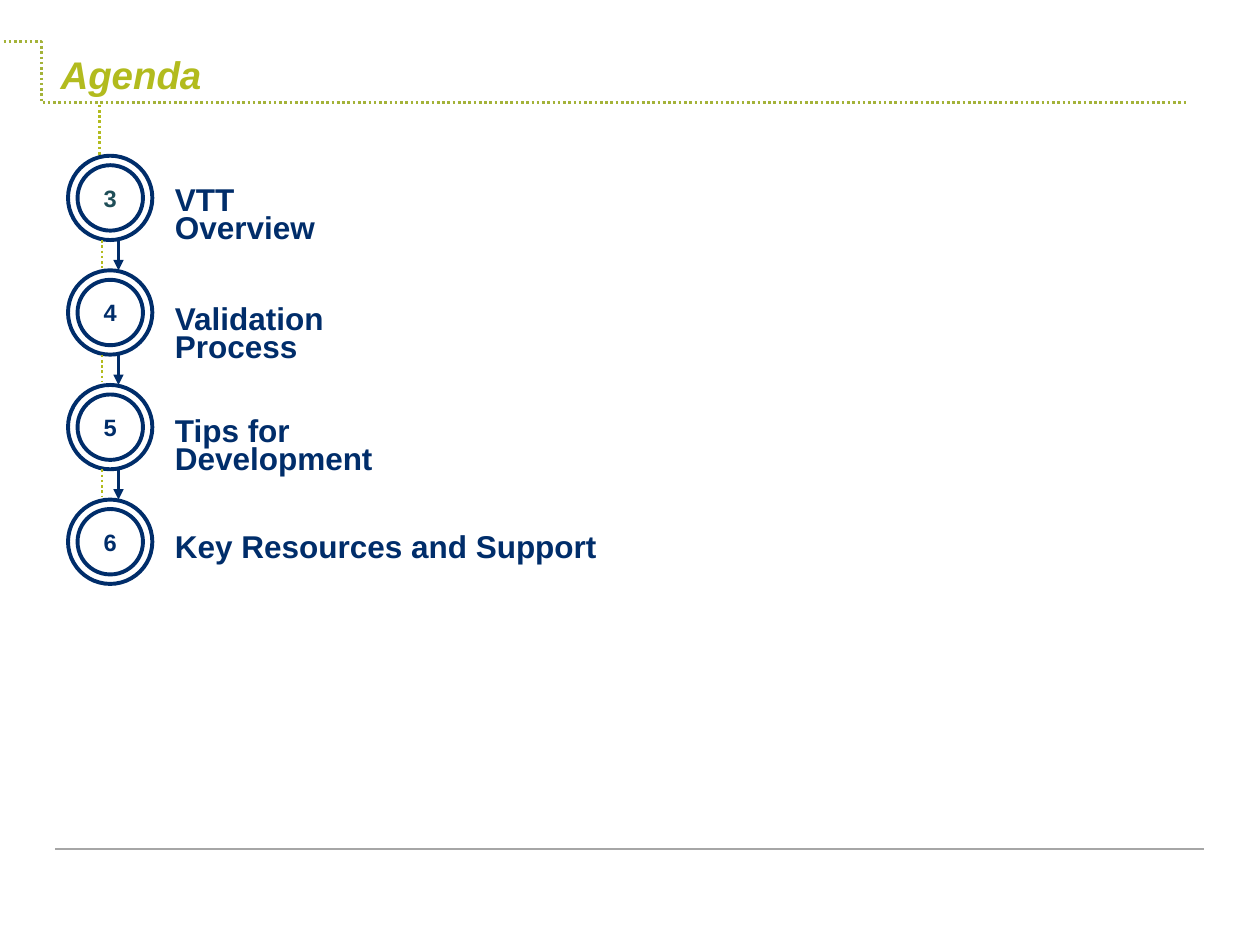
from dataclasses import dataclass
from lxml import etree
from pptx import Presentation, util as u
from pptx.dml.color import RGBColor
from pptx.enum import dml, shapes, text
from pptx.oxml import ns


@dataclass(frozen=True)
class Theme:
    font: str = "Arial"
    navy: str = "002D6A"
    teal: str = "1F4E58"
    lime: str = "B2BB1E"
    olive: str = "A4B339"
    grey: str = "A6A6A6"
    title_size: float = 22
    label_size: float = 18
    number_size: float = 13.5


@dataclass(frozen=True)
class Step:
    number: str
    label: str
    label_top: float
    label_width: float
    number_color: str


THEME = Theme()
STEPS = [
    Step("3", "VTT Overview", 105.1, 118, THEME.teal),
    Step("4", "Validation Process", 172.8, 154.8, THEME.navy),
    Step("5", "Tips for Development", 236.9, 175.7, THEME.navy),
    Step("6", "Key Resources and Support", 303.1, 257.8, THEME.navy),
]
# Step column, in points
FIRST_TOP, PITCH = 89, 65.5
RING_LEFT, RING_SIZE, CORE_SIZE = 38.9, 48.2, 37.4
STEM_X, ARROW_X, LABEL_LEFT = 58.3, 67.7, 92.9


def write(shape, words: str, *, size: float, color: str, italic: bool = False,
          align=text.PP_ALIGN.LEFT, anchor=text.MSO_ANCHOR.TOP,
          spacing: float | None = None) -> None:
    frame = shape.text_frame
    frame.word_wrap = True
    frame.vertical_anchor = anchor
    para = frame.paragraphs[0]
    para.alignment = align
    if spacing:
        para.line_spacing = u.Pt(spacing)
    span = para.add_run()
    span.text = words
    span.font.name = THEME.font
    span.font.size = u.Pt(size)
    span.font.bold, span.font.italic = True, italic
    span.font.color.rgb = RGBColor.from_string(color)


def draw_line(page, start: tuple, end: tuple, color: str, *, width: float = 1.5,
              dotted: bool = False, arrow: bool = False, bend: int | None = None) -> None:
    kind = shapes.MSO_CONNECTOR.STRAIGHT if bend is None else shapes.MSO_CONNECTOR.ELBOW
    line = page.shapes.add_connector(kind, *map(u.Pt, start + end))
    line.line.color.rgb = RGBColor.from_string(color)
    line.line.width = u.Pt(width)
    if dotted:
        line.line.dash_style = dml.MSO_LINE.ROUND_DOT
    properties = line._element.spPr
    if arrow:
        etree.SubElement(properties.find(ns.qn("a:ln")), ns.qn("a:tailEnd"), type="triangle")
    if bend is not None:
        guides = properties.find(ns.qn("a:prstGeom")).get_or_add_avLst()
        etree.SubElement(guides, ns.qn("a:gd"), name="adj1", fmla=f"val {bend}")
    etree.SubElement(properties, ns.qn("a:effectLst"))


def draw_circle(group, left: float, top: float, size: float):
    circle = group.shapes.add_shape(shapes.MSO_SHAPE.OVAL, *map(u.Pt, (left, top, size, size)))
    circle.shadow.inherit = False
    circle.fill.background()
    circle.line.color.rgb = RGBColor.from_string(THEME.navy)
    circle.line.width = u.Pt(2.25)
    return circle


def draw_badge(page, step: Step, top: float) -> None:
    group = page.shapes.add_group_shape()
    inset = (RING_SIZE - CORE_SIZE) / 2
    draw_circle(group, RING_LEFT, top, RING_SIZE)
    core = draw_circle(group, RING_LEFT + inset, top + inset, CORE_SIZE)
    frame = core.text_frame
    frame.margin_left = frame.margin_right = frame.margin_top = frame.margin_bottom = 0
    write(core, step.number, size=THEME.number_size, color=step.number_color,
          align=text.PP_ALIGN.CENTER, anchor=text.MSO_ANCHOR.MIDDLE)


def draw_label(page, step: Step) -> None:
    box = page.shapes.add_textbox(
        *map(u.Pt, (LABEL_LEFT, step.label_top, step.label_width, 21)))
    write(box, step.label, size=THEME.label_size, color=THEME.navy, spacing=16)
    box.text_frame.auto_size = text.MSO_AUTO_SIZE.SHAPE_TO_FIT_TEXT


def main() -> None:
    deck = Presentation()
    deck.slide_width, deck.slide_height = u.Pt(720), u.Pt(540)
    page = deck.slides.add_slide(deck.slide_layouts[5])

    # Frame lines and title
    draw_line(page, (31.7, 485.3), (688.3, 485.3), THEME.grey, width=1)
    draw_line(page, (2, 23.9), (678.2, 58.7), THEME.olive, dotted=True, bend=3200)
    title = page.shapes.title
    title.left, title.top, title.width, title.height = map(u.Pt, (27.4, 25.2, 620.6, 33.8))
    write(title, "Agenda", size=THEME.title_size, color=THEME.lime, italic=True,
          anchor=text.MSO_ANCHOR.MIDDLE)

    # Steps with their links
    draw_line(page, (56.9, 59.8), (56.9, FIRST_TOP), THEME.lime, dotted=True)
    for index, step in enumerate(STEPS):
        top = FIRST_TOP + index * PITCH
        draw_badge(page, step, top)
        draw_label(page, step)
        if index < len(STEPS) - 1:
            bottom, following = top + RING_SIZE, top + PITCH
            draw_line(page, (STEM_X, bottom), (STEM_X, following - 1.5), THEME.lime, dotted=True)
            draw_line(page, (ARROW_X, bottom), (ARROW_X, following), THEME.navy, arrow=True)

    deck.save("out.pptx")


if __name__ == "__main__":
    main()
